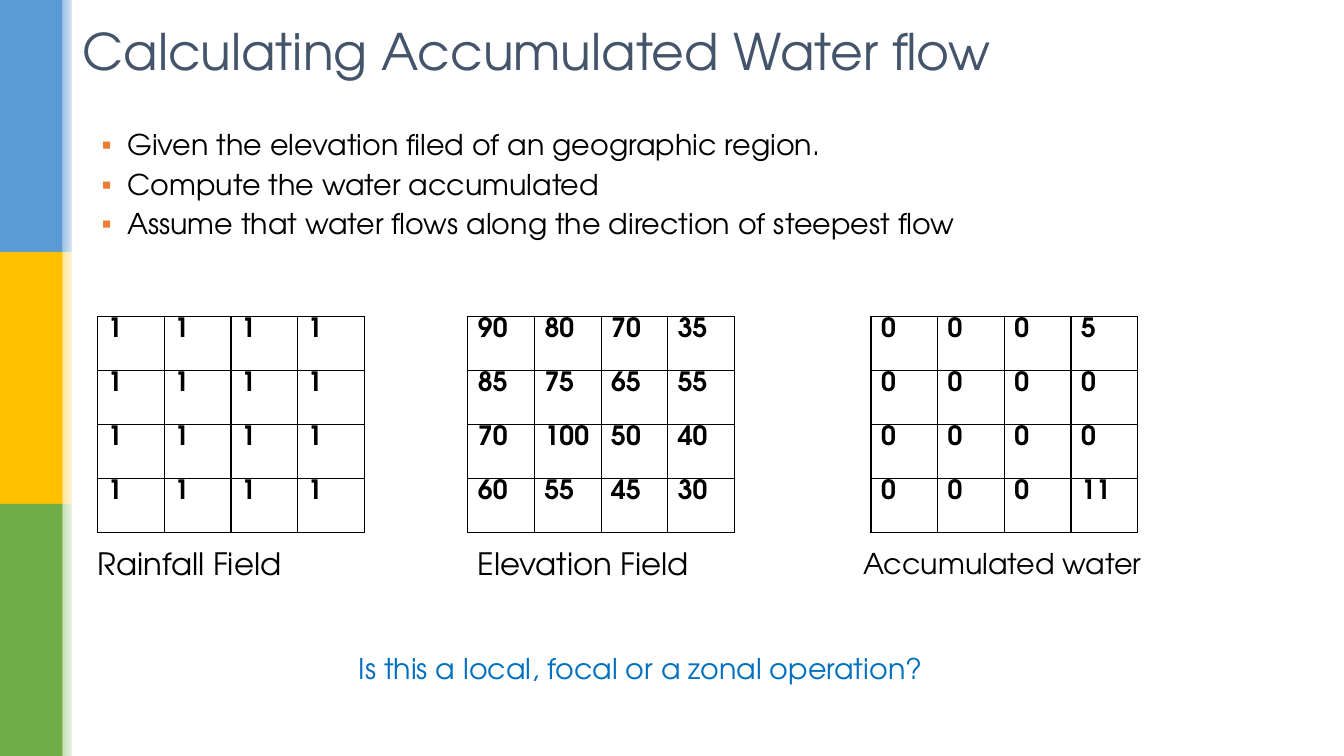
"""Build the slide on calculating accumulated water flow."""
from dataclasses import dataclass

from lxml.etree import SubElement
from pptx import Presentation
from pptx.dml.color import RGBColor
from pptx.enum.shapes import MSO_SHAPE as Preset
from pptx.enum.text import MSO_ANCHOR as Anchor, MSO_AUTO_SIZE as AutoSize, PP_ALIGN as Align
from pptx.oxml import parse_xml
from pptx.oxml.ns import nsdecls, qn
from pptx.util import Cm, Pt

COLORS = {
    "black": "000000", "white": "FFFFFF", "title": "44546A", "question": "0070C0",
    "bullet": "ED7D31", "blue": "5B9BD5", "blue_glow": "9DC3E6", "gold": "FFC000",
    "gold_glow": "FFE699", "green": "70AD47", "green_glow": "C5E0B4",
}
FONT = "TeX Gyre Adventor"
SLIDE_WIDTH, SLIDE_HEIGHT = 33.87, 19.05
BAND_WIDTH, GLOW_WIDTH = 1.58, 0.41
GRID_TOP, COLUMN_WIDTH, ROW_HEIGHT = 7.98, 1.68, 1.36


@dataclass(frozen=True)
class Box:
    left: float
    top: float
    width: float
    height: float

    def lengths(self) -> tuple[Cm, Cm, Cm, Cm]:
        return Cm(self.left), Cm(self.top), Cm(self.width), Cm(self.height)


@dataclass(frozen=True)
class Field:
    left: float
    values: list[list[int]]


@dataclass(frozen=True)
class Label:
    text: str
    box: Box
    size: float = 20.4
    spacing: float = 0.9
    color: str = "black"


BANDS = ["blue", "gold", "green"]
FIELDS = [
    Field(2.46, [[1] * 4] * 4),
    Field(11.79, [[90, 80, 70, 35], [85, 75, 65, 55], [70, 100, 50, 40], [60, 55, 45, 30]]),
    Field(21.95, [[0, 0, 0, 5], [0, 0, 0, 0], [0, 0, 0, 0], [0, 0, 0, 11]]),
]
LABELS = [
    Label("Rainfall Field", Box(2.21, 13.77, 7.21, 1.09), 22, 0.8),
    Label("Elevation Field", Box(11.79, 13.77, 7.21, 1.09), 22, 0.8),
    Label("Accumulated water", Box(21.51, 13.72, 7.6, 1.09)),
    Label("Is this a local, focal or a zonal operation?", Box(8.79, 16.38, 15.44, 1.09),
          color="question"),
]
STEPS = [
    "Given the elevation filed of an geographic region.",
    "Compute the water accumulated",
    "Assume that water flows along the direction of steepest flow",
]


def rgb(name: str) -> RGBColor:
    """Look up a named colour."""
    return RGBColor.from_string(COLORS[name])


def add_bullet(paragraph) -> None:
    """Give a paragraph a hanging square bullet."""
    properties = paragraph._p.get_or_add_pPr()
    properties.set("marL", str(Cm(0.64)))
    properties.set("indent", str(-Cm(0.64)))
    bullet_color = SubElement(properties, qn("a:buClr"))
    SubElement(bullet_color, qn("a:srgbClr"), val=COLORS["bullet"])
    SubElement(properties, qn("a:buChar"), char="▪")


def write(frame, *lines: str, size: float = 20.4, color: str = "black", bold: bool = False,
          spacing: float = 1.0, gap: float = 0, bulleted: bool = False) -> None:
    """Fill a text frame with one formatted paragraph per line."""
    frame.word_wrap = True
    for index, line in enumerate(lines):
        paragraph = frame.add_paragraph() if index else frame.paragraphs[0]
        if bulleted:
            add_bullet(paragraph)
        paragraph.alignment = Align.LEFT
        paragraph.line_spacing = spacing
        paragraph.space_before = Pt(gap if index else 0)
        run = paragraph.add_run()
        run.text = line
        run.font.name, run.font.size, run.font.bold = FONT, Pt(size), bold
        run.font.color.rgb = rgb(color)


def place(placeholder, box: Box, anchor: Anchor):
    """Move a placeholder and return its text frame."""
    placeholder.left, placeholder.top, placeholder.width, placeholder.height = box.lengths()
    frame = placeholder.text_frame
    frame.auto_size = AutoSize.NONE
    frame.vertical_anchor = anchor
    return frame


def add_bar(slide, box: Box, color: str, fade: bool = False) -> None:
    """Draw a borderless bar, plain or fading to white on the right."""
    bar = slide.shapes.add_shape(Preset.RECTANGLE, *box.lengths())
    bar.shadow.inherit = False
    bar.line.fill.background()
    if fade:
        bar.fill.gradient()
        bar.fill.gradient_angle = 0
        for stop, name in zip(bar.fill.gradient_stops, (color, "white")):
            stop.color.rgb = rgb(name)
    else:
        bar.fill.solid()
        bar.fill.fore_color.rgb = rgb(color)


def add_side_strip(slide) -> None:
    """Draw the three coloured bands with their glow along the left edge."""
    height = SLIDE_HEIGHT / len(BANDS)
    for index, band in enumerate(BANDS):
        top = index * height
        add_bar(slide, Box(0, top, BAND_WIDTH, height), band)
        add_bar(slide, Box(BAND_WIDTH, top, GLOW_WIDTH, height), f"{band}_glow", fade=True)
    add_bar(slide, Box(1.81, 0, 0.13, SLIDE_HEIGHT), "white")


def add_borders(cell) -> None:
    """Outline a cell on all four sides."""
    properties = cell._tc.get_or_add_tcPr()
    for index, side in enumerate("LRTB"):
        properties.insert(index, parse_xml(
            f'<a:ln{side} {nsdecls("a")} w="{Pt(1)}"><a:solidFill>'
            f'<a:srgbClr val="{COLORS["black"]}"/></a:solidFill></a:ln{side}>'))


def add_field(slide, field: Field) -> None:
    """Draw a raster field as a table."""
    rows, columns = len(field.values), len(field.values[0])
    box = Box(field.left, GRID_TOP, columns * COLUMN_WIDTH, rows * ROW_HEIGHT)
    grid = slide.shapes.add_table(rows, columns, *box.lengths()).table
    grid.first_row = grid.horz_banding = False
    for row, values in enumerate(field.values):
        for column, value in enumerate(values):
            cell = grid.cell(row, column)
            cell.fill.solid()
            cell.fill.fore_color.rgb = rgb("white")
            add_borders(cell)
            write(cell.text_frame, str(value), size=19, bold=True, spacing=0.8)


def main() -> None:
    """Build and save the slide."""
    deck = Presentation()
    deck.slide_width, deck.slide_height = Cm(SLIDE_WIDTH), Cm(SLIDE_HEIGHT)
    slide = deck.slides.add_slide(deck.slide_layouts[1])
    add_side_strip(slide)
    title = place(slide.shapes.title, Box(1.83, 0.2, 26.62, 2.13), Anchor.MIDDLE)
    write(title, "Calculating Accumulated Water flow", size=36, color="title")
    body = place(slide.placeholders[1], Box(2.31, 3.18, 23.7, 3.58), Anchor.TOP)
    write(body, *STEPS, spacing=0.9, gap=6.1, bulleted=True)
    for field in FIELDS:
        add_field(slide, field)
    for label in LABELS:
        frame = slide.shapes.add_textbox(*label.box.lengths()).text_frame
        write(frame, label.text, size=label.size, color=label.color, spacing=label.spacing)
    deck.save("out.pptx")


if __name__ == "__main__":
    main()
